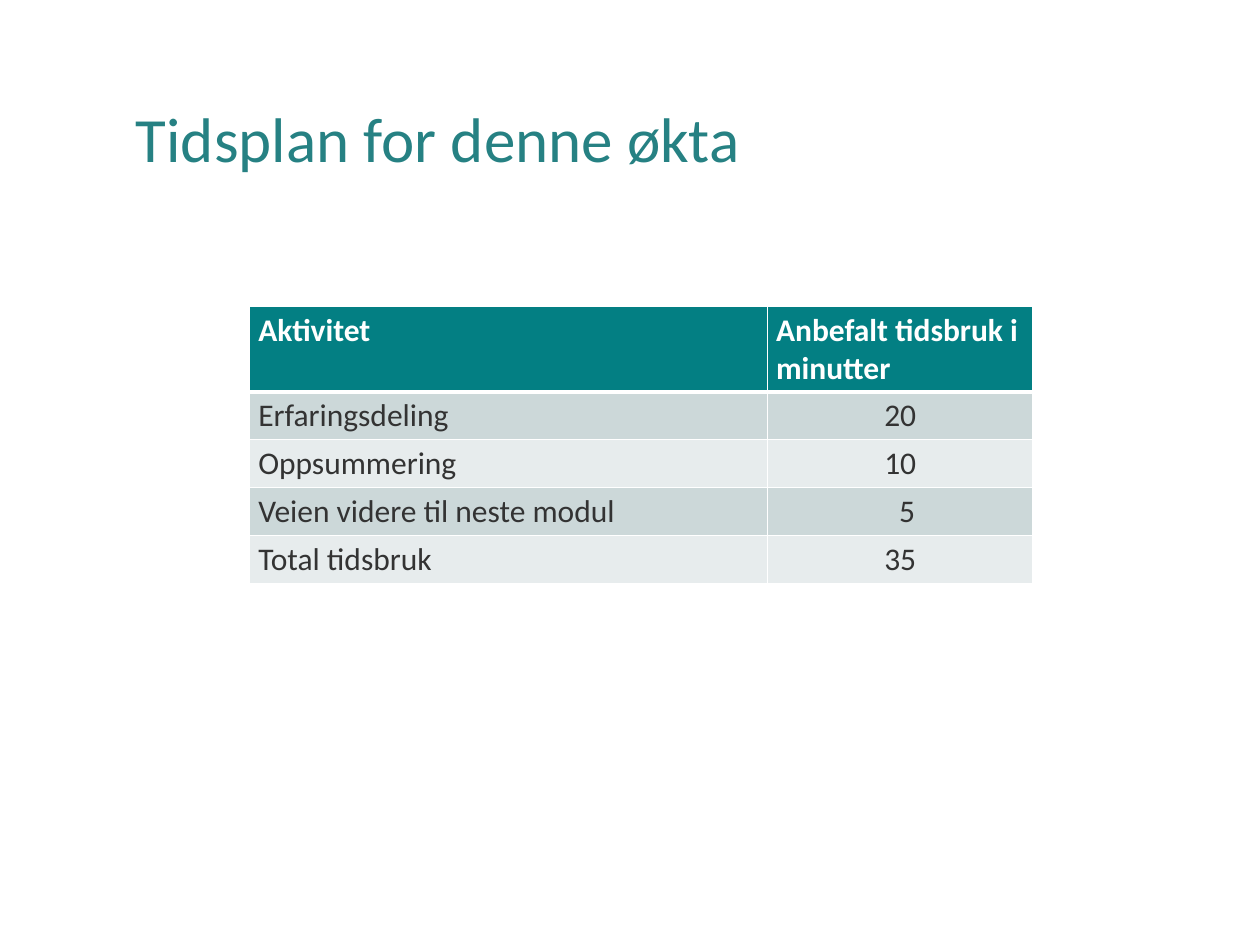
from lxml import etree
from pptx import Presentation
from pptx.dml.color import RGBColor
from pptx.enum.text import MSO_ANCHOR, PP_ALIGN
from pptx.oxml.ns import qn
from pptx.util import Inches, Pt

MIDDLE = MSO_ANCHOR.MIDDLE
LEFT, CENTER = PP_ALIGN.LEFT, PP_ALIGN.CENTER

FONT = "Calibri"
WHITE, TEXT = "FFFFFF", "333333"
TITLE, HEADER = "268183", "037F83"
BANDS = ["CCD8D9", "E7ECED"]

COLUMNS = [4.11, 2.11]
HEADER_HEIGHT, ROW_HEIGHT = 0.65, 0.38
DIGIT_WIDTH = 0.11
ROWS = [
    ("Aktivitet", "Anbefalt tidsbruk i minutter"),
    ("Erfaringsdeling", "20"),
    ("Oppsummering", "10"),
    ("Veien videre til neste modul", "5"),
    ("Total tidsbruk", "35"),
]


def rgb(color):
    return RGBColor.from_string(color)


def add_run(p, text, size, color, bold=False):
    r = p.add_run()
    r.text = text
    r.font.name = FONT
    r.font.size = Pt(size)
    r.font.bold = bold
    r.font.color.rgb = rgb(color)


def add_title(slide, text):
    tb = slide.shapes.add_textbox(Inches(0.98), Inches(0.4), Inches(8.29), Inches(1.45))
    tf = tb.text_frame
    tf.word_wrap = True
    tf.vertical_anchor = MIDDLE
    p = tf.paragraphs[0]
    p.line_spacing = 0.9
    add_run(p, text, 36, TITLE)


def set_borders(cell, top, bottom):
    # Borders must come before the fill in the cell properties
    tc_pr = cell._tc.get_or_add_tcPr()
    widths = {"a:lnL": 1, "a:lnR": 1, "a:lnT": top, "a:lnB": bottom}
    for tag, width in widths.items():
        ln = etree.SubElement(tc_pr, qn(tag), w=str(Pt(width)))
        fill = etree.SubElement(ln, qn("a:solidFill"))
        etree.SubElement(fill, qn("a:srgbClr"), val=WHITE)


def fill_cell(cell, text, row, col):
    is_header = row == 0
    set_borders(cell, 3 if row == 1 else 1, 3 if is_header else 1)
    cell.fill.solid()
    cell.fill.fore_color.rgb = rgb(HEADER if is_header else BANDS[(row - 1) % 2])
    cell.margin_left = cell.margin_right = Inches(0.07)
    cell.margin_top = cell.margin_bottom = Inches(0.04)
    is_number = col == 1 and not is_header
    if is_number and len(text) == 1:
        # Line up a single digit with the units of the other numbers
        cell.margin_left += Inches(DIGIT_WIDTH)
    p = cell.text_frame.paragraphs[0]
    p.alignment = CENTER if is_number else LEFT
    add_run(p, text, 18, WHITE if is_header else TEXT, is_header)


def add_schedule(slide):
    heights = [HEADER_HEIGHT] + [ROW_HEIGHT] * (len(ROWS) - 1)
    table = slide.shapes.add_table(
        len(ROWS), len(COLUMNS), Inches(1.98), Inches(2.43),
        Inches(sum(COLUMNS)), Inches(sum(heights))).table
    for column, width in zip(table.columns, COLUMNS):
        column.width = Inches(width)
    for row, height in zip(table.rows, heights):
        row.height = Inches(height)
    for i, texts in enumerate(ROWS):
        for j, text in enumerate(texts):
            fill_cell(table.cell(i, j), text, i, j)


def main():
    prs = Presentation()
    prs.slide_width, prs.slide_height = Inches(10), Inches(7.5)
    slide = prs.slides.add_slide(prs.slide_layouts[6])

    # Heading and time schedule
    add_title(slide, "Tidsplan for denne økta")
    add_schedule(slide)

    prs.save("out.pptx")


if __name__ == "__main__":
    main()
